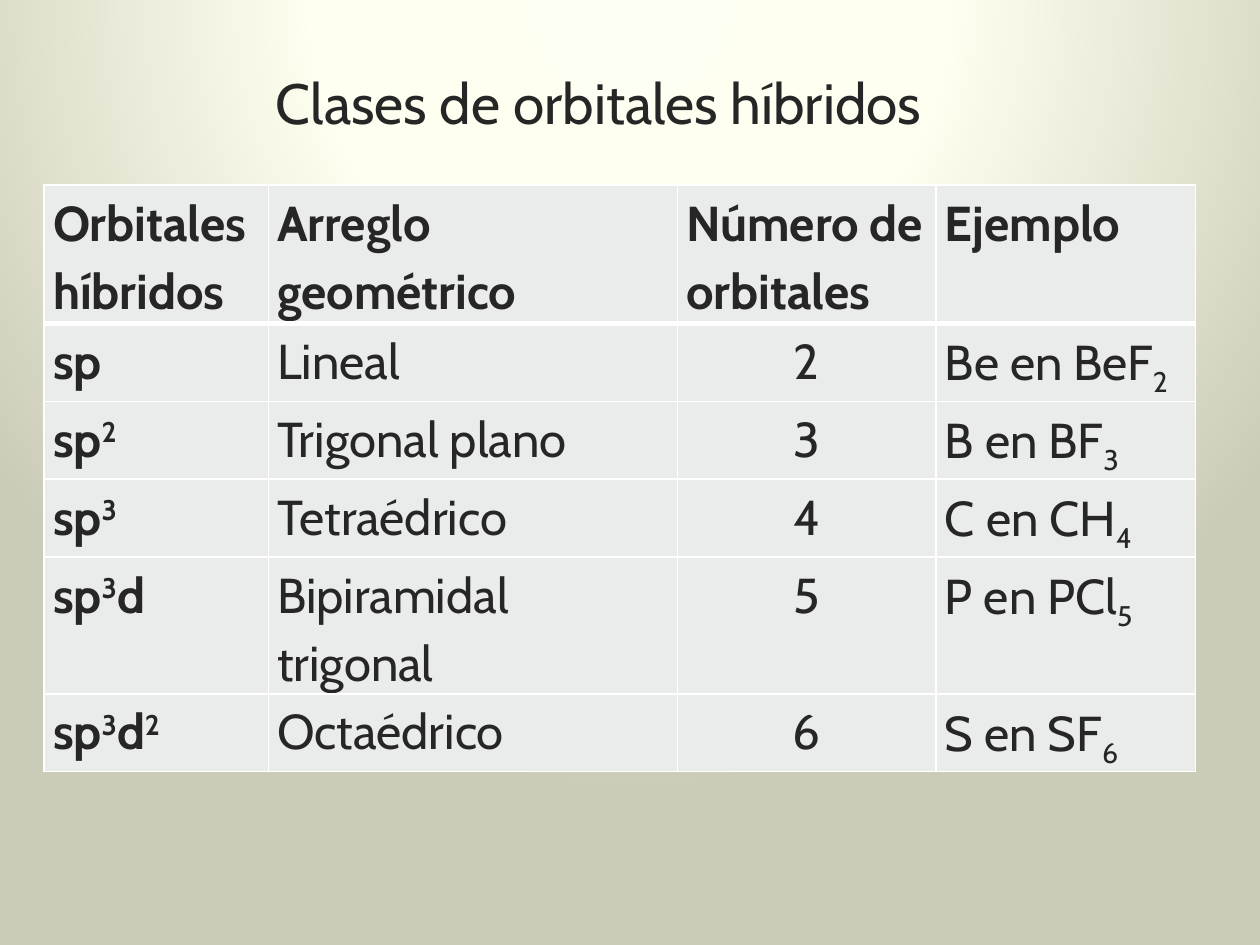
"""Build a slide with a table of hybrid orbital classes."""
from pptx import Presentation
from pptx.dml.color import RGBColor as Rgb
from pptx.enum.shapes import MSO_SHAPE as Kind
from pptx.enum.text import MSO_ANCHOR as Anchor, PP_ALIGN as Align
from pptx.oxml import parse_xml
from pptx.oxml.ns import nsdecls
from pptx.util import Cm, Pt

TITLE = "Clases de orbitales híbridos"
ROWS = [
    ("Orbitales híbridos", "Arreglo geométrico", "Número de orbitales", "Ejemplo"),
    ("sp", "Lineal", "2", "Be en BeF|_2"),
    ("sp|^2", "Trigonal plano", "3", "B en BF|_3"),
    ("sp|^3", "Tetraédrico", "4", "C en CH|_4"),
    ("sp|^3|d", "Bipiramidal trigonal", "5", "P en PCl|_5"),
    ("sp|^3|d|^2", "Octaédrico", "6", "S en SF|_6"),
]
WIDTHS = [4.52, 8.25, 5.21, 5.23]
HEIGHTS = [2.79, 1.57, 1.57, 1.57, 2.74, 1.57]
STOPS = [(0, "FEFFE7"), (40, "FEFFE2"), (100, "98996F")]
INK, CELL, WHITE = "262626", "E9ECEB", "FFFFFF"
BASE = {"^": 30000, "_": -25000}
INSET = {"margin_left": Cm(0.18), "margin_right": Cm(0.18),
         "margin_top": 0, "margin_bottom": 0}
PLAIN = {"first_row": False, "horz_banding": False}


def color(code):
    return Rgb.from_string(code)


def apply(obj, vals):
    for name, val in vals.items():
        setattr(obj, name, val)


def write(para, text, size, bold=False):
    for part in text.split("|"):
        run = para.add_run()
        run.text = part.lstrip("^_")
        apply(run.font, {"name": "Cabin", "size": Pt(size), "bold": bold})
        run.font.color.rgb = color(INK)
        if part[0] in BASE:
            run.font._element.set("baseline", str(BASE[part[0]]))


def paint(slide):
    stops = "".join(f'<a:gs pos="{pos * 1000}"><a:srgbClr val="{code}"/></a:gs>'
                    for pos, code in STOPS)
    slide.element.cSld.insert(0, parse_xml(
        f'<p:bg {nsdecls("p", "a")}><p:bgPr><a:gradFill rotWithShape="1">'
        f'<a:gsLst>{stops}</a:gsLst><a:path path="circle"><a:fillToRect '
        'l="50000" t="-80000" r="50000" b="180000"/></a:path></a:gradFill>'
        '<a:effectLst/></p:bgPr></p:bg>'))


def veil(slide, wide, high):
    rect = slide.shapes.add_shape(Kind.RECTANGLE, 0, 0, wide, high)
    rect.shadow.inherit = False
    rect.line.fill.background()
    rect.fill.solid()
    rect.fill.fore_color.rgb = color(WHITE)
    tone = rect.fill._xPr.find(".//{*}srgbClr")
    tone.append(parse_xml(f'<a:alpha {nsdecls("a")} val="50000"/>'))


def edge(cell, head):
    props = cell._tc.get_or_add_tcPr()
    for spot, side in enumerate("LRTB"):
        wide = Pt(3 if head and side == "B" else 1)
        props.insert(spot, parse_xml(
            f'<a:ln{side} {nsdecls("a")} w="{wide}"><a:solidFill>'
            f'<a:srgbClr val="{WHITE}"/></a:solidFill></a:ln{side}>'))


def grid(slide):
    table = slide.shapes.add_table(
        len(ROWS), len(WIDTHS), Cm(0.89), Cm(3.73),
        Cm(sum(WIDTHS)), Cm(sum(HEIGHTS))).table
    apply(table, PLAIN)
    for col, wide in zip(table.columns, WIDTHS):
        col.width = Cm(wide)
    for r, (row, high) in enumerate(zip(ROWS, HEIGHTS)):
        table.rows[r].height = Cm(high)
        for c, text in enumerate(row):
            cell = table.cell(r, c)
            apply(cell, INSET)
            cell.fill.solid()
            cell.fill.fore_color.rgb = color(CELL)
            edge(cell, r == 0)
            para = cell.text_frame.paragraphs[0]
            mid = r > 0 and c == 2
            apply(para, {"line_spacing": 1.15,
                         "alignment": Align.CENTER if mid else Align.LEFT})
            write(para, text, 28, r == 0 or c == 0)


def title(slide):
    box = slide.shapes.add_textbox(Cm(5.31), Cm(1.12), Cm(16.74), Cm(1.75))
    frame = box.text_frame
    apply(frame, {"word_wrap": True, "vertical_anchor": Anchor.BOTTOM})
    write(frame.paragraphs[0], TITLE, 32.4)


def main():
    deck = Presentation()
    apply(deck, {"slide_width": Cm(25.4), "slide_height": Cm(19.05)})
    slide = deck.slides.add_slide(deck.slide_layouts[6])
    paint(slide)
    veil(slide, deck.slide_width, deck.slide_height)
    grid(slide)
    title(slide)
    deck.save("out.pptx")


if __name__ == "__main__":
    main()
